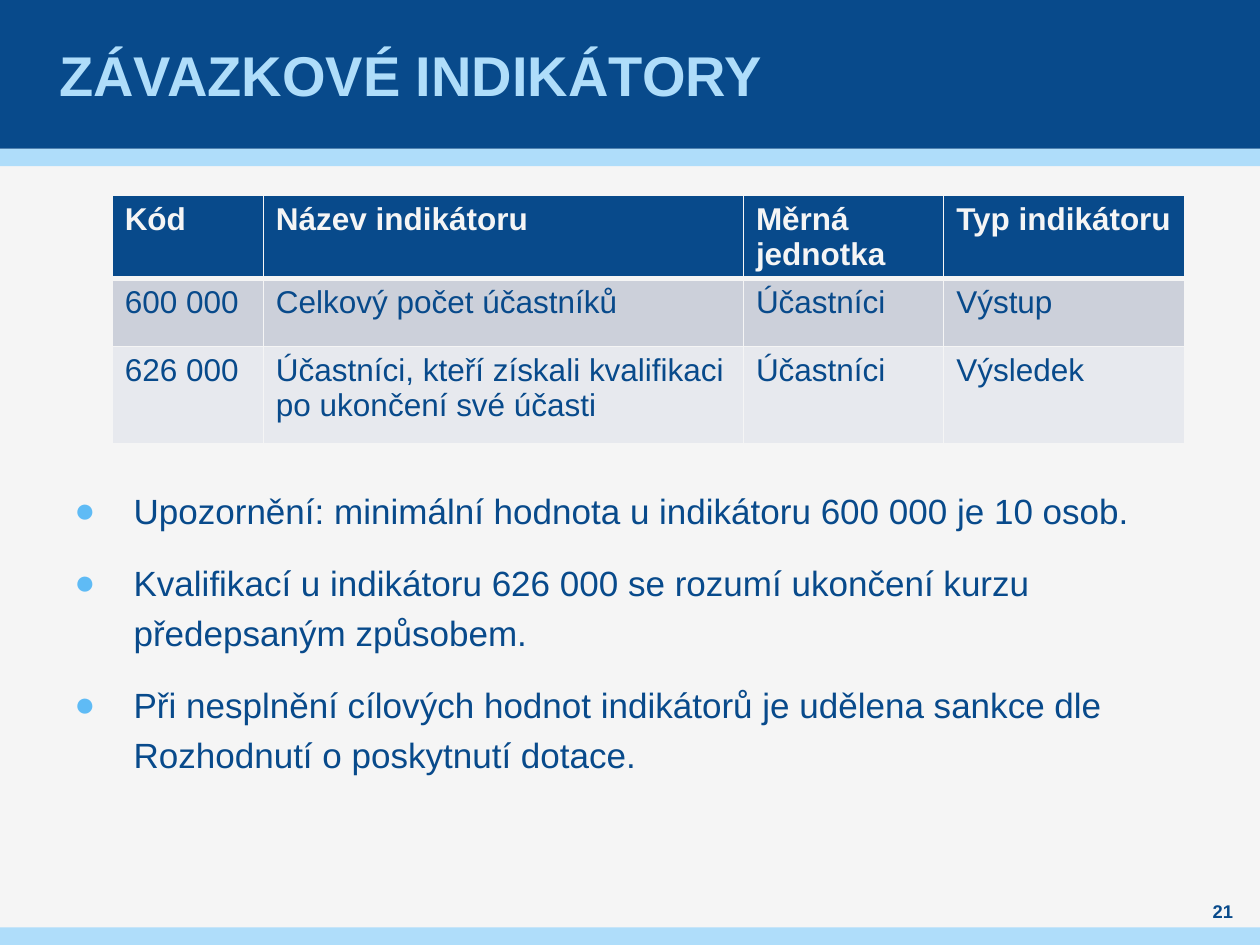
from lxml import etree
from pptx import Presentation
from pptx.dml.color import RGBColor
from pptx.enum.shapes import MSO_SHAPE
from pptx.enum.text import MSO_ANCHOR, MSO_AUTO_SIZE, PP_ALIGN
from pptx.oxml.ns import qn
from pptx.util import Inches, Pt

RECT = MSO_SHAPE.RECTANGLE
MIDDLE, TOP = MSO_ANCHOR.MIDDLE, MSO_ANCHOR.TOP
FIXED = MSO_AUTO_SIZE.NONE
LEFT, CENTER = PP_ALIGN.LEFT, PP_ALIGN.CENTER

NAVY, SKY, DOT, PALE = "084A8B", "AFDDFA", "5FBBF5", "F5F5F5"
BANDS = ["CCD0DA", "E7E9EE"]
COLS, ROWS = 100, 75

CELLS = [
    ["Kód", "Název indikátoru", "Měrná jednotka", "Typ indikátoru"],
    ["600 000", "Celkový počet účastníků", "Účastníci", "Výstup"],
    ["626 000", "Účastníci, kteří získali kvalifikaci po ukončení své účasti",
     "Účastníci", "Výsledek"],
]
NOTES = [
    "Upozornění: minimální hodnota u indikátoru 600 000 je 10 osob.",
    "Kvalifikací u indikátoru 626 000 se rozumí ukončení kurzu předepsaným způsobem.",
    "Při nesplnění cílových hodnot indikátorů je udělena sankce dle "
    "Rozhodnutí o poskytnutí dotace.",
]


def tint(code):
    return RGBColor.from_string(code)


def write(par, text, size=18, color=NAVY, bold=False, align=LEFT):
    par.alignment = align
    run = par.add_run()
    run.text = text
    font = run.font
    font.name, font.size, font.bold = "Arial", Pt(size), bold
    font.color.rgb = tint(color)


def paint(parent, tag, color):
    fill = etree.SubElement(parent, qn(tag))
    etree.SubElement(fill, qn("a:srgbClr"), val=color)
    return fill


def edge(cell, side, width):
    props = cell._tc.get_or_add_tcPr()
    line = etree.SubElement(props, qn("a:ln" + side), w=str(Pt(width)))
    paint(line, "a:solidFill", PALE)


class Deck:
    def __init__(self):
        self.file = Presentation()
        self.file.slide_width, self.file.slide_height = Inches(10), Inches(7.5)
        self.slide = self.file.slides.add_slide(self.file.slide_layouts[1])
        back = self.slide.background.fill
        back.solid()
        back.fore_color.rgb = tint(PALE)

    def box(self, x, y, w, h):
        col, row = self.file.slide_width / COLS, self.file.slide_height / ROWS
        return int(x * col), int(y * row), int(w * col), int(h * row)

    def place(self, shape, *area):
        shape.left, shape.top, shape.width, shape.height = self.box(*area)

    def frame(self, shape, anchor=TOP, side=0, top=0):
        frame = shape.text_frame
        frame.word_wrap, frame.auto_size = True, FIXED
        frame.vertical_anchor = anchor
        frame.margin_left = frame.margin_right = Inches(side)
        frame.margin_top, frame.margin_bottom = Inches(top), 0
        return frame

    def band(self, y, h, color):
        shape = self.slide.shapes.add_shape(RECT, *self.box(0, y, COLS, h))
        shape.shadow.inherit = False
        shape.fill.solid()
        shape.fill.fore_color.rgb = tint(color)
        shape.line.fill.background()
        self.slide.shapes._spTree.insert(2, shape._element)

    def title(self, text, *area):
        shape = self.slide.shapes.title
        self.place(shape, *area)
        frame = self.frame(shape, MIDDLE, side=0.04)
        write(frame.paragraphs[0], text, size=32, color=SKY, bold=True)

    def bullets(self, items, *area, top):
        shape = self.slide.placeholders[1]
        self.place(shape, *area)
        frame = self.frame(shape, top=top)
        for i, text in enumerate(items):
            par = frame.add_paragraph() if i else frame.paragraphs[0]
            par.line_spacing = Pt(28.8)
            par.space_before = par.space_after = Pt(6)
            write(par, text, size=20)
            props = par._p.get_or_add_pPr()
            props.set("marL", str(Inches(0.47)))
            props.set("indent", str(-Inches(0.47)))
            paint(props, "a:buClr", DOT)
            etree.SubElement(props, qn("a:buChar"), char="●")

    def label(self, text, *area):
        shape = self.slide.shapes.add_textbox(*self.box(*area))
        frame = self.frame(shape, MIDDLE)
        write(frame.paragraphs[0], text, size=10.5, bold=True, align=CENTER)

    def table(self, data, x, y, wide, tall):
        area = self.box(x, y, sum(wide), sum(tall))
        grid = self.slide.shapes.add_table(len(tall), len(wide), *area).table
        for col, w in zip(grid.columns, wide):
            col.width = self.box(0, 0, w, 0)[2]
        for row, h in zip(grid.rows, tall):
            row.height = self.box(0, 0, 0, h)[3]
        for r, line in enumerate(data):
            for c, text in enumerate(line):
                self.cell(grid.cell(r, c), text, r)

    def cell(self, cell, text, row):
        head = row == 0
        for side in "LR":
            edge(cell, side, 1)
        edge(cell, "T", 3 if row == 1 else 1)
        edge(cell, "B", 3 if head else 1)
        cell.fill.solid()
        cell.fill.fore_color.rgb = tint(NAVY if head else BANDS[row - 1])
        write(cell.text_frame.paragraphs[0], text,
              color=PALE if head else NAVY, bold=head)


def main():
    deck = Deck()
    deck.band(73.6, 1.4, SKY)
    deck.band(0, 11.8, NAVY)
    deck.band(11.8, 1.4, SKY)
    deck.title("ZÁVAZKOVÉ INDIKÁTORY", 4.3, 0, 92.1, 11.8)
    deck.bullets(NOTES, 5.9, 15.5, 88.2, 55.8, top=2.27)
    deck.label("21", 94.5, 71.3, 5.1, 2)
    deck.table(CELLS, 8.9, 15.5, [12, 38.1, 15.9, 19.1], [6.5, 5.4, 7.7])
    deck.file.save("out.pptx")


if __name__ == "__main__":
    main()
